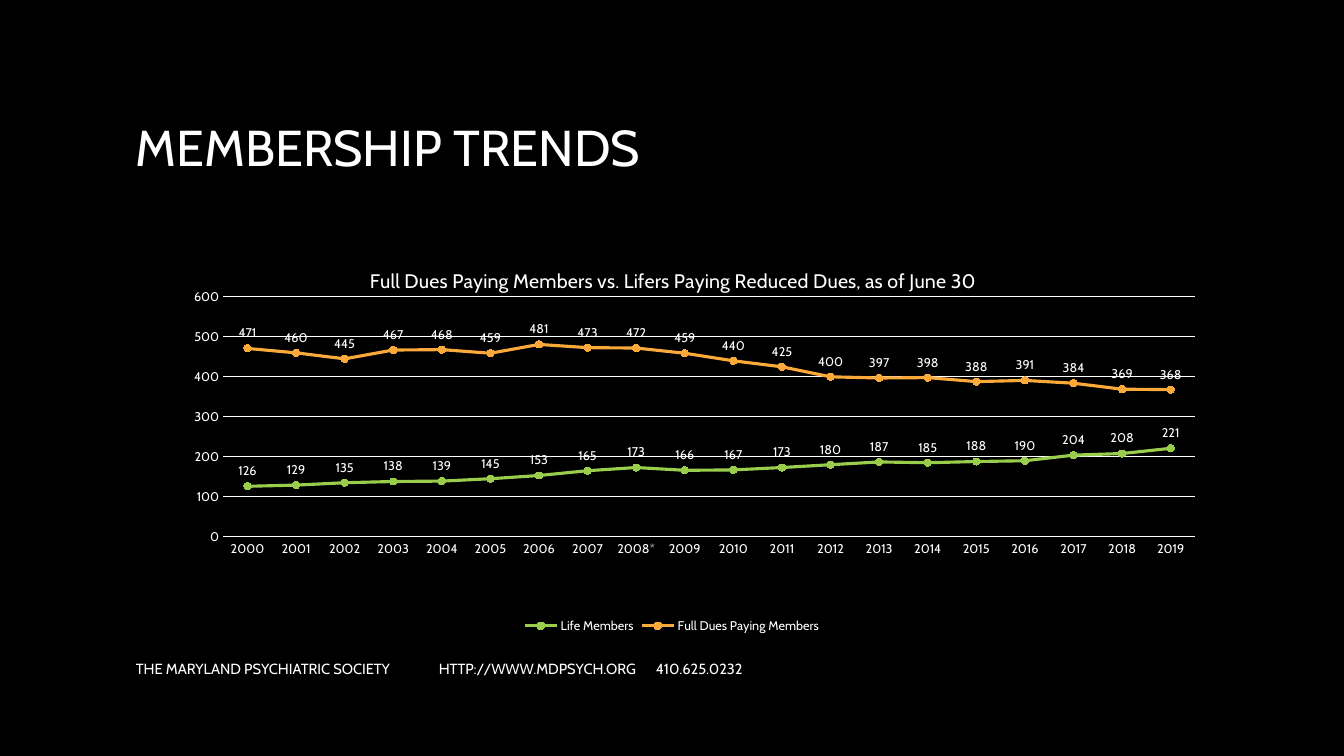
from dataclasses import dataclass

from lxml import etree
from pptx import Presentation
from pptx.chart.data import CategoryChartData
from pptx.dml.color import RGBColor as Color
from pptx.enum.chart import XL_CHART_TYPE as ChartType
from pptx.enum.chart import XL_LABEL_POSITION as LabelPosition
from pptx.enum.chart import XL_LEGEND_POSITION as LegendPosition
from pptx.enum.chart import XL_MARKER_STYLE as MarkerStyle
from pptx.enum.chart import XL_TICK_MARK as TickMark
from pptx.enum.text import MSO_ANCHOR as Anchor
from pptx.oxml.ns import qn
from pptx.util import Pt


@dataclass(frozen=True)
class Theme:
    font: str = "Cabin"
    background: Color = Color(0x00, 0x00, 0x00)
    text: Color = Color(0xFF, 0xFF, 0xFF)
    life: Color = Color(0x9A, 0xCD, 0x4C)
    full: Color = Color(0xFA, 0xA9, 0x3A)
    title_size: float = 36
    chart_title_size: float = 14
    footer_size: float = 10.5
    chart_size: float = 10
    label_size: float = 9
    rule_width: float = 0.75
    series_width: float = 2.25
    marker_size: int = 5


@dataclass(frozen=True)
class Box:
    left: float
    top: float
    width: float
    height: float

    def lengths(self):
        return [Pt(n) for n in (self.left, self.top, self.width, self.height)]


THEME = Theme()
YEARS = [f"{year}*" if year == 2008 else str(year) for year in range(2000, 2020)]
MEMBERS = [
    ("Life Members", THEME.life,
     (126, 129, 135, 138, 139, 145, 153, 165, 173, 166,
      167, 173, 180, 187, 185, 188, 190, 204, 208, 221)),
    ("Full Dues Paying Members", THEME.full,
     (471, 460, 445, 467, 468, 459, 481, 473, 472, 459,
      440, 425, 400, 397, 398, 388, 391, 384, 369, 368)),
]


def style_font(font, size):
    font.name = THEME.font
    font.size = Pt(size)
    font.bold = False
    font.color.rgb = THEME.text


def style_line(line, color, width):
    line.color.rgb = color
    line.width = Pt(width)


def add_text(page, box, text, size):
    """Add one vertically centred line and return its paragraph."""
    frame = page.shapes.add_textbox(*box.lengths()).text_frame
    frame.word_wrap = True
    frame.vertical_anchor = Anchor.MIDDLE
    para = frame.paragraphs[0]
    span = para.add_run()
    span.text = text
    style_font(span.font, size)
    return para


def set_layout(parent, index, **fractions):
    """Give a chart part a manual place, in fractions of the chart."""
    for old in parent.findall(qn("c:layout")):
        parent.remove(old)
    layout = etree.Element(qn("c:layout"))
    manual = etree.SubElement(layout, qn("c:manualLayout"))
    if "w" in fractions:
        etree.SubElement(manual, qn("c:layoutTarget")).set("val", "inner")
    for mode in ("xMode", "yMode"):
        etree.SubElement(manual, qn(f"c:{mode}")).set("val", "edge")
    for name, value in fractions.items():
        etree.SubElement(manual, qn(f"c:{name}")).set("val", str(value))
    parent.insert(index, layout)


def add_title(page, box):
    para = add_text(page, box, "MEMBERSHIP TRENDS", THEME.title_size)
    para.line_spacing = 0.9


def add_footer(page, box):
    parts = ("THE MARYLAND PSYCHIATRIC SOCIETY", "HTTP://WWW.MDPSYCH.ORG", "410.625.0232")
    para = add_text(page, box, "\t".join(parts), THEME.footer_size)
    tabs = etree.SubElement(para._p.get_or_add_pPr(), qn("a:tabLst"))
    for stop in (216.4, 371.4):
        tab = etree.SubElement(tabs, qn("a:tab"))
        tab.set("pos", str(Pt(stop)))
        tab.set("algn", "l")


def style_axes(chart):
    for axis in (chart.category_axis, chart.value_axis):
        axis.major_tick_mark = axis.minor_tick_mark = TickMark.NONE
        style_font(axis.tick_labels.font, THEME.label_size)
    style_line(chart.category_axis.format.line, THEME.text, THEME.rule_width)
    values = chart.value_axis
    values.minimum_scale, values.maximum_scale, values.major_unit = 0, 600, 100
    values.format.line.fill.background()
    values.has_major_gridlines = True
    style_line(values.major_gridlines.format.line, THEME.text, THEME.rule_width)


def style_series(series, color):
    series.smooth = False
    style_line(series.format.line, color, THEME.series_width)
    marker = series.marker
    marker.style = MarkerStyle.CIRCLE
    marker.size = THEME.marker_size
    marker.format.fill.solid()
    marker.format.fill.fore_color.rgb = color
    marker.format.line.color.rgb = color
    labels = series.data_labels
    labels.show_value = True
    labels.position = LabelPosition.ABOVE
    style_font(labels.font, THEME.label_size)


def add_member_chart(page, box):
    data = CategoryChartData()
    data.categories = YEARS
    for name, _, counts in MEMBERS:
        data.add_series(name, counts)
    chart = page.shapes.add_chart(ChartType.LINE_MARKERS, *box.lengths(), data).chart
    style_font(chart.font, THEME.chart_size)
    chart.plots[0].vary_by_categories = False

    # Chart title
    span = chart.chart_title.text_frame.paragraphs[0].add_run()
    span.text = "Full Dues Paying Members vs. Lifers Paying Reduced Dues, as of June 30"
    style_font(span.font, THEME.chart_title_size)
    chart.chart_title.include_in_layout = False

    # Legend, axes and series
    chart.has_legend = True
    chart.legend.position = LegendPosition.BOTTOM
    chart.legend.include_in_layout = False
    style_font(chart.legend.font, THEME.label_size)
    style_axes(chart)
    for series, (_, color, _) in zip(chart.plots[0].series, MEMBERS):
        style_series(series, color)

    # Places inside the chart
    root = chart._chartSpace.chart
    set_layout(root.find(qn("c:title")), 1, x=0.22, y=0.04)
    set_layout(root.plotArea, 0, x=0.089, y=0.126, w=0.89, h=0.615)


def main():
    deck = Presentation()
    deck.slide_width, deck.slide_height = Pt(960), Pt(540)
    page = deck.slides.add_slide(deck.slide_layouts[6])
    page.background.fill.solid()
    page.background.fill.fore_color.rgb = THEME.background
    add_title(page, Box(90, 49, 780, 116.6))
    add_footer(page, Box(90, 463, 491, 28.8))
    add_member_chart(page, Box(90, 177, 780, 278.6))
    deck.save("out.pptx")


if __name__ == "__main__":
    main()
